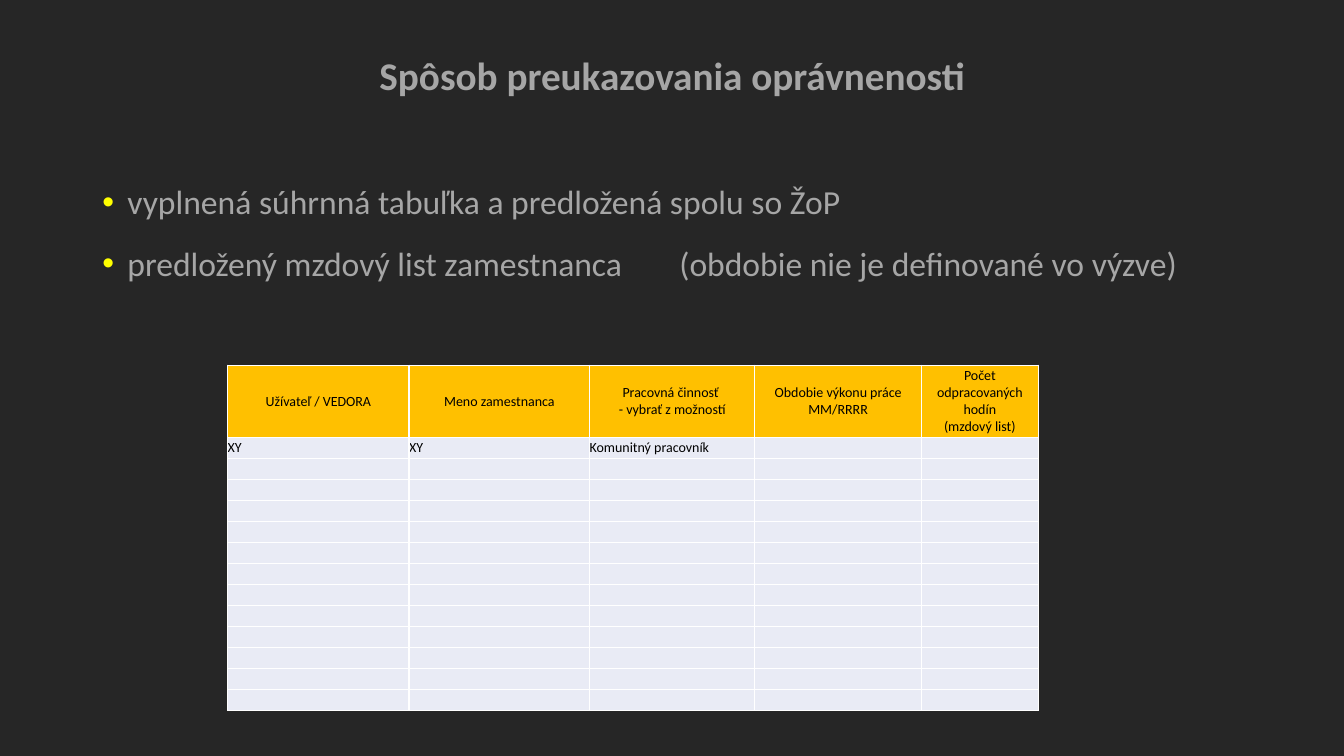
from pptx import Presentation
from pptx.dml.color import RGBColor
from pptx.enum.text import MSO_ANCHOR, PP_ALIGN
from pptx.oxml import parse_xml
from pptx.oxml.ns import nsdecls, qn
from pptx.util import Pt
from lxml.etree import SubElement

NAMESPACE = nsdecls("a")


def color(hex_string):
    return RGBColor.from_string(hex_string)


class SlideBuilder:
    font_name = "Calibri"
    background = "262626"
    text_color = "A6A6A6"
    bullet_color = "FFFF00"
    header_fill = "FFC000"
    body_fill = "E9EBF5"
    border_color = "FFFFFF"
    cell_text_color = "000000"
    cell_size = 10

    def __init__(self, presentation):
        self.slide = presentation.slides.add_slide(presentation.slide_layouts[6])
        fill = self.slide.background.fill
        fill.solid()
        fill.fore_color.rgb = color(self.background)

    def add_run(self, paragraph, text, size, hex_string, bold=False):
        run = paragraph.add_run()
        run.text = text
        run.font.name = self.font_name
        run.font.size = Pt(size)
        run.font.bold = bold
        run.font.color.rgb = color(hex_string)
        return run

    def add_text_frame(self, left, top, width, height, anchor):
        shape = self.slide.shapes.add_textbox(Pt(left), Pt(top), Pt(width), Pt(height))
        text_frame = shape.text_frame
        text_frame.word_wrap = True
        text_frame.vertical_anchor = anchor
        return text_frame

    def add_title(self, text, left, top, width, height):
        text_frame = self.add_text_frame(left, top, width, height, MSO_ANCHOR.MIDDLE)
        paragraph = text_frame.paragraphs[0]
        paragraph.alignment = PP_ALIGN.CENTER
        paragraph.line_spacing = 0.9
        self.add_run(paragraph, text, 28, self.text_color, bold=True)

    def add_bullets(self, items, left, top, width, height):
        text_frame = self.add_text_frame(left, top, width, height, MSO_ANCHOR.TOP)
        for index, parts in enumerate(items):
            paragraph = text_frame.add_paragraph() if index else text_frame.paragraphs[0]
            paragraph.line_spacing = 0.9
            paragraph.space_before = Pt(18)
            properties = paragraph._p.get_or_add_pPr()
            properties.set("marL", str(Pt(18)))
            properties.set("indent", str(-Pt(18)))
            properties.append(parse_xml(
                f'<a:buClr {NAMESPACE}><a:srgbClr val="{self.bullet_color}"/></a:buClr>'))
            properties.append(parse_xml(f'<a:buFont {NAMESPACE} typeface="Arial"/>'))
            properties.append(parse_xml(f'<a:buChar {NAMESPACE} char="•"/>'))
            for text, spacing in parts:
                run = self.add_run(paragraph, text, 24, self.text_color)
                if spacing:
                    run.font._element.set("spc", str(round(spacing * 100)))

    def add_cell_borders(self, cell):
        properties = cell._tc.get_or_add_tcPr()
        for index, side in enumerate(("lnL", "lnR", "lnT", "lnB")):
            properties.insert(index, parse_xml(
                f'<a:{side} {NAMESPACE} w="{Pt(1)}"><a:solidFill>'
                f'<a:srgbClr val="{self.border_color}"/></a:solidFill></a:{side}>'))

    def fill_cell(self, cell, text, is_header):
        cell.margin_left = cell.margin_right = cell.margin_top = cell.margin_bottom = 0
        cell.vertical_anchor = MSO_ANCHOR.MIDDLE
        cell.fill.solid()
        cell.fill.fore_color.rgb = color(self.header_fill if is_header else self.body_fill)
        self.add_cell_borders(cell)
        paragraph = cell.text_frame.paragraphs[0]
        paragraph.alignment = PP_ALIGN.CENTER if is_header else PP_ALIGN.LEFT
        if not text:
            end_properties = SubElement(paragraph._p, qn("a:endParaRPr"))
            end_properties.set("sz", str(self.cell_size * 100))
            return
        for index, line in enumerate(text.split("\n")):
            if index:
                paragraph.add_line_break()
            self.add_run(paragraph, line, self.cell_size, self.cell_text_color)

    def add_table(self, rows, row_count, left, top, column_widths, header_height, row_height):
        heights = [header_height] + [row_height] * (row_count - 1)
        table = self.slide.shapes.add_table(
            row_count, len(column_widths), Pt(left), Pt(top),
            Pt(sum(column_widths)), Pt(sum(heights))).table
        for column, width in zip(table.columns, column_widths):
            column.width = Pt(width)
        for row_index, height in enumerate(heights):
            row = table.rows[row_index]
            row.height = Pt(height)
            texts = rows[row_index] if row_index < len(rows) else ()
            for column_index, cell in enumerate(row.cells):
                text = texts[column_index] if column_index < len(texts) else ""
                self.fill_cell(cell, text, row_index == 0)


def main():
    presentation = Presentation()
    presentation.slide_width = Pt(960)
    presentation.slide_height = Pt(540)
    builder = SlideBuilder(presentation)
    builder.add_title("Spôsob preukazovania oprávnenosti", 66, 16, 828, 79)
    builder.add_bullets([
        [("vyplnená súhrnná tabuľka a predložená spolu so ŽoP", 0)],
        [("predložený mzdový list zamestnanca\t", 0), (" ", 10.8),
         ("(obdobie nie je definované vo výzve)", 0)],
    ], 66, 129, 828, 389.5)
    builder.add_table([
        ["Užívateľ / VEDORA", "Meno zamestnanca", "Pracovná činnosť \n- vybrať z možností",
         "Obdobie výkonu práce MM/RRRR", "Počet odpracovaných hodín\n(mzdový list)"],
        ["XY", "XY", "Komunitný pracovník"],
    ], 14, 162.6, 260.8, [129.6, 129, 118, 119, 83.5], 51.8, 15)
    presentation.save("out.pptx")


if __name__ == "__main__":
    main()
